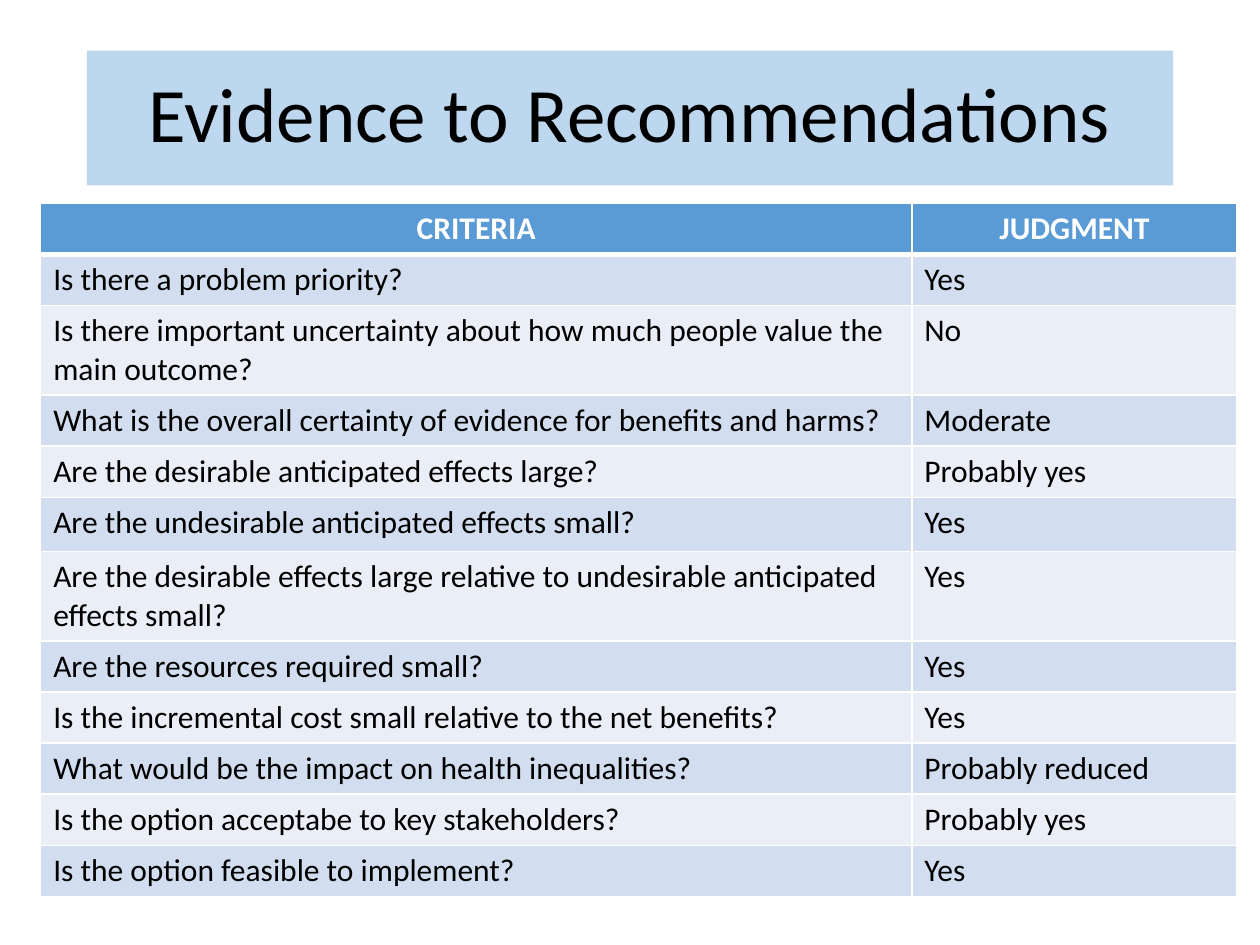
"""Build the slide that lists criteria and judgments from evidence to recommendations."""
from dataclasses import dataclass

from lxml import etree
from pptx import Presentation
from pptx.dml.color import RGBColor
from pptx.enum.shapes import MSO_SHAPE
from pptx.enum.text import MSO_ANCHOR, PP_ALIGN
from pptx.oxml.ns import qn
from pptx.util import Cm, Pt

RECTANGLE = MSO_SHAPE.RECTANGLE
MIDDLE = MSO_ANCHOR.MIDDLE
LEFT, CENTER = PP_ALIGN.LEFT, PP_ALIGN.CENTER


@dataclass(frozen=True)
class Theme:
    font: str = "Calibri"
    title_size: int = 44
    table_size: int = 18
    ink: str = "000000"
    white: str = "FFFFFF"
    title_fill: str = "BDD7EE"
    header_fill: str = "5B9BD5"
    bands: tuple = ("D2DEEF", "EAEFF7")
    rule: int = 1
    header_rule: int = 3


THEME = Theme()
TITLE = "Evidence to Recommendations"
HEADINGS = ("CRITERIA", "JUDGMENT")
JUDGMENTS = (
    ("Is there a problem priority?", "Yes"),
    ("Is there important uncertainty about how much people value the main outcome?", "No"),
    ("What is the overall certainty of evidence for benefits and harms?", "Moderate"),
    ("Are the desirable anticipated effects large?", "Probably yes"),
    ("Are the undesirable anticipated effects small?", "Yes"),
    ("Are the desirable effects large relative to undesirable anticipated effects small?", "Yes"),
    ("Are the resources required small?", "Yes"),
    ("Is the incremental cost small relative to the net benefits?", "Yes"),
    ("What would be the impact on health inequalities?", "Probably reduced"),
    ("Is the option acceptabe to key stakeholders?", "Probably yes"),
    ("Is the option feasible to implement?", "Yes"),
)
COLUMN_WIDTHS = (Cm(17.56), Cm(6.56))
ROW_HEIGHT = Cm(1.03)
TALLER_ROW, TALLER_HEIGHT = 5, Cm(1.09)


def write_text(frame, text, *, size, color, bold=False, align=LEFT, spacing=None):
    paragraph = frame.paragraphs[0]
    paragraph.alignment = align
    paragraph.line_spacing = spacing
    run = paragraph.add_run()
    run.text = text
    run.font.name = THEME.font
    run.font.size = Pt(size)
    run.font.bold = bold
    run.font.color.rgb = RGBColor.from_string(color)


def paint(target, color):
    target.fill.solid()
    target.fill.fore_color.rgb = RGBColor.from_string(color)


def rule_cell(cell, top, bottom):
    properties = cell._tc.get_or_add_tcPr()
    sides = {"lnL": THEME.rule, "lnR": THEME.rule, "lnT": top, "lnB": bottom}
    for side, width in sides.items():
        line = etree.SubElement(properties, qn(f"a:{side}"), w=str(Pt(width)))
        fill = etree.SubElement(line, qn("a:solidFill"))
        etree.SubElement(fill, qn("a:srgbClr"), val=THEME.white)


def add_title(slide):
    banner = slide.shapes.add_shape(RECTANGLE, Cm(1.75), Cm(1.02), Cm(21.9), Cm(2.72))
    banner.shadow.inherit = False
    banner.line.fill.background()
    paint(banner, THEME.title_fill)
    banner.text_frame.word_wrap = True
    banner.text_frame.vertical_anchor = MIDDLE
    write_text(banner.text_frame, TITLE, size=THEME.title_size, color=THEME.ink,
               align=CENTER, spacing=0.9)


def fill_row(table, index, texts, fill, *, top, bottom, **text_format):
    for column, text in enumerate(texts):
        cell = table.cell(index, column)
        rule_cell(cell, top, bottom)
        paint(cell, fill)
        write_text(cell.text_frame, text, size=THEME.table_size, **text_format)


def add_judgments(slide):
    row_count = len(JUDGMENTS) + 1
    table = slide.shapes.add_table(row_count, len(HEADINGS), Cm(0.82), Cm(4.1),
                                   sum(COLUMN_WIDTHS), ROW_HEIGHT * row_count).table
    for column, width in zip(table.columns, COLUMN_WIDTHS):
        column.width = width
    for row in table.rows:
        row.height = ROW_HEIGHT
    table.rows[TALLER_ROW].height = TALLER_HEIGHT

    fill_row(table, 0, HEADINGS, THEME.header_fill, top=THEME.rule,
             bottom=THEME.header_rule, color=THEME.white, bold=True, align=CENTER)
    for index, judgment in enumerate(JUDGMENTS, start=1):
        band = THEME.bands[(index - 1) % len(THEME.bands)]
        top = THEME.header_rule if index == 1 else THEME.rule
        fill_row(table, index, judgment, band, top=top, bottom=THEME.rule, color=THEME.ink)


def main():
    deck = Presentation()
    deck.slide_width, deck.slide_height = Cm(25.4), Cm(19.05)
    slide = deck.slides.add_slide(deck.slide_layouts[6])
    add_title(slide)
    add_judgments(slide)
    deck.save("out.pptx")


if __name__ == "__main__":
    main()
